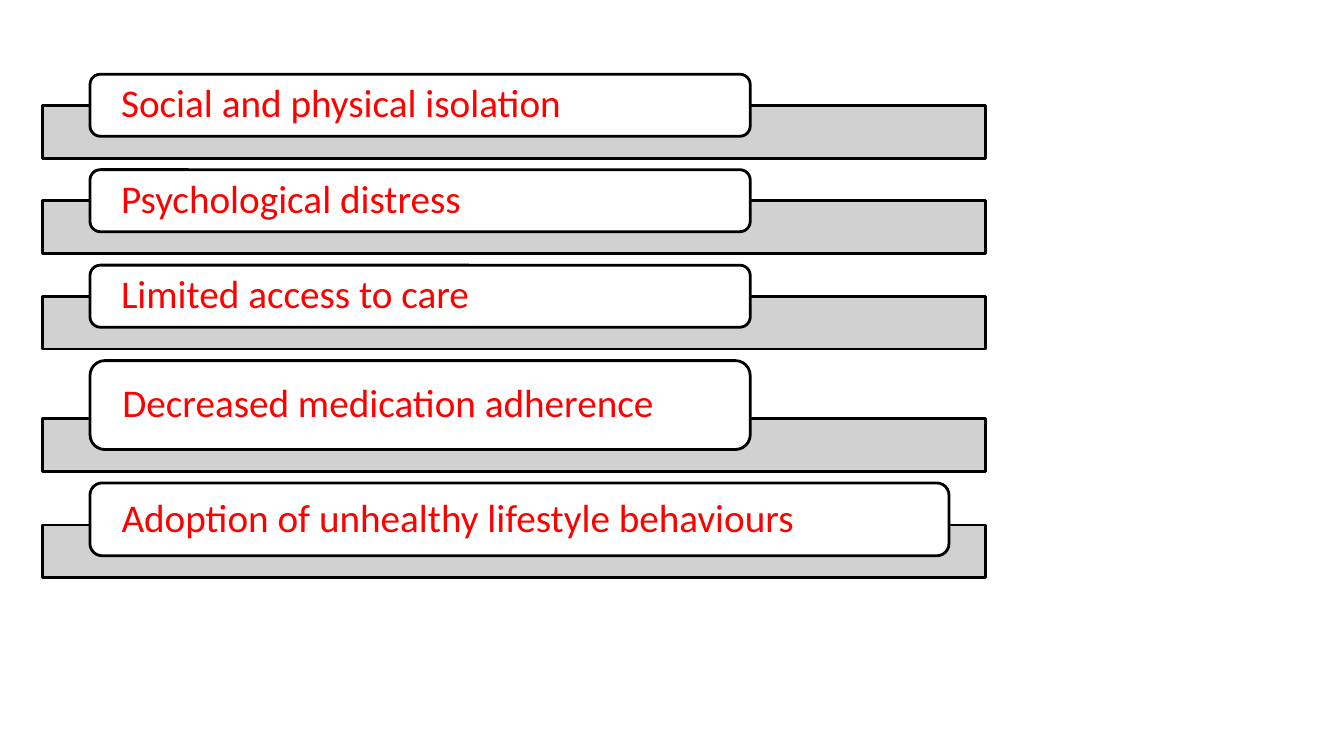
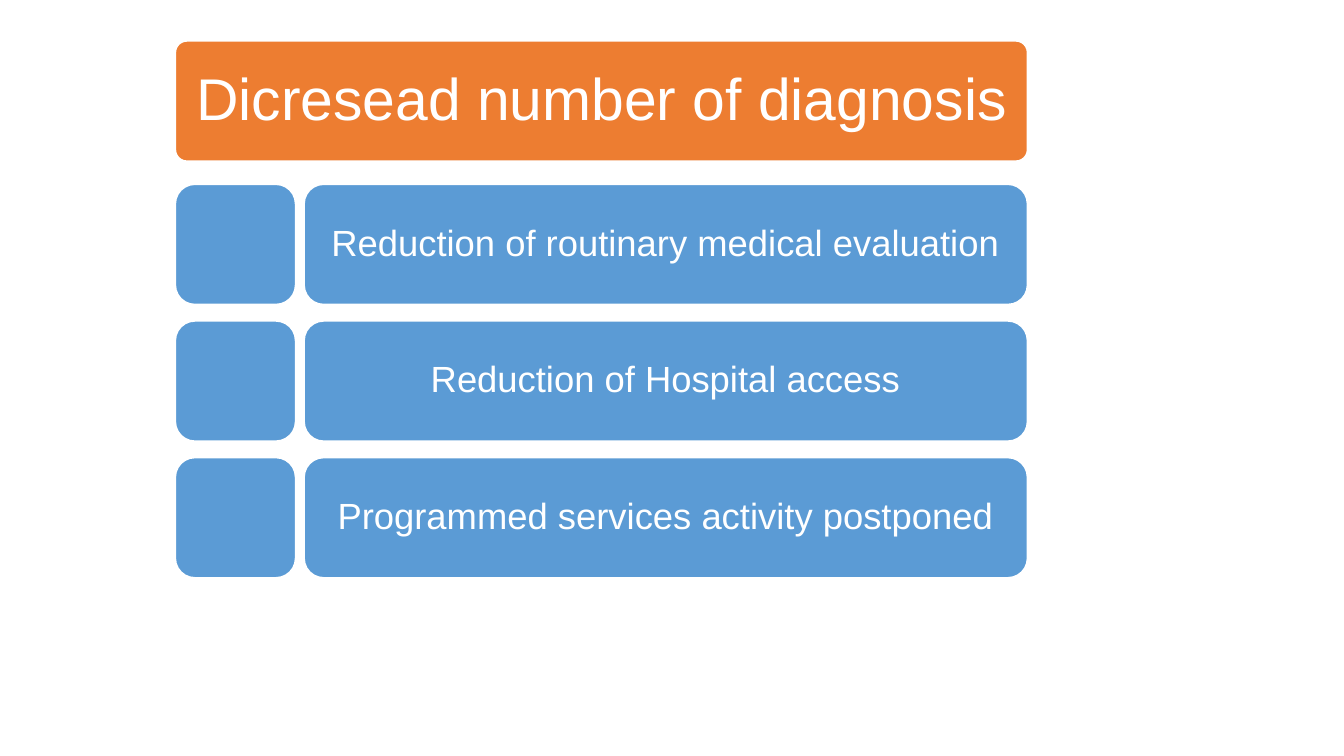
from lxml import etree
from pptx import Presentation
from pptx.dml.color import RGBColor
from pptx.enum.shapes import MSO_SHAPE
from pptx.enum.text import MSO_ANCHOR, MSO_AUTO_SIZE, PP_ALIGN
from pptx.oxml.ns import qn
from pptx.util import Pt

RECTANGLE = MSO_SHAPE.RECTANGLE
ROUNDED = MSO_SHAPE.ROUNDED_RECTANGLE
MIDDLE = MSO_ANCHOR.MIDDLE
NO_AUTOFIT = MSO_AUTO_SIZE.NONE
LEFT = PP_ALIGN.LEFT
CENTER = PP_ALIGN.CENTER
TITLE_ONLY, BLANK = 5, 6

COLORS = {
    "band": "CCCCCC",
    "outline": "000000",
    "white": "FFFFFF",
    "effect": "FF0000",
    "heading": "ED7D31",
    "cause": "5B9BD5",
}

EFFECTS = [
    ("Social and physical isolation", 471.6, 44.3),
    ("Psychological distress", 471.6, 44.3),
    ("Limited access to care", 471.6, 44.3),
    ("Decreased medication adherence", 471.6, 63.5),
    ("Adoption of unhealthy lifestyle behaviours", 613.6, 52),
]

HEADING = "Dicresead number of diagnosis"
CAUSES = [
    "Reduction of routinary medical evaluation",
    "Reduction of Hospital access",
    "Programmed services activity postponed",
]


def color(name):
    return RGBColor.from_string(COLORS[name])


def add_panel(slide, kind, box, fill, line):
    panel = slide.shapes.add_shape(kind, *map(Pt, box))
    panel.shadow.inherit = False
    panel.fill.solid()
    panel.fill.fore_color.rgb = color(fill)
    panel.line.color.rgb = color(line)
    panel.line.width = Pt(2)
    return panel


def set_opacity(panel, percent):
    rgb = panel.fill._xPr.find(qn("a:solidFill"))[0]
    etree.SubElement(rgb, qn("a:alpha")).set("val", str(percent * 1000))


def write(shape, text, font, size, ink, align, inset):
    frame = shape.text_frame
    frame.text = text
    frame.word_wrap = True
    frame.auto_size = NO_AUTOFIT
    frame.vertical_anchor = MIDDLE
    frame.margin_left = frame.margin_right = Pt(inset)
    frame.margin_top = frame.margin_bottom = Pt(0)
    paragraph = frame.paragraphs[0]
    paragraph.alignment = align
    paragraph.line_spacing = 0.9
    run_font = paragraph.runs[0].font
    run_font.name = font
    run_font.size = Pt(size)
    run_font.color.rgb = color(ink)


def build_effects(slide):
    band_height, overlap, gap = 37.7, 22, 8.2
    top = 53
    for text, width, height in EFFECTS:
        band_top = top + height - overlap
        band = add_panel(slide, RECTANGLE, (30.2, band_top, 674, band_height),
                         "band", "outline")
        set_opacity(band, 90)
        label = add_panel(slide, ROUNDED, (64.3, top, width, height),
                          "white", "outline")
        write(label, text, "Calibri", 28, "effect", LEFT, 20)
        top = band_top + band_height + gap


def build_causes(slide):
    left, width, height = 124.8, 609.6, 86.8
    label_left = left + height + 5.2
    label_width = left + width - label_left

    heading_box = (left, 28.8, width, height)
    heading = add_panel(slide, ROUNDED, heading_box, "heading", "white")
    heading.adjustments[0] = 0.1
    title = slide.shapes.title
    title.left, title.top, title.width, title.height = map(Pt, heading_box)
    write(title, HEADING, "Arial", 42, "white", CENTER, 8)
    slide.shapes._spTree.append(title._element)

    for row, text in enumerate(CAUSES):
        top = 131.2 + row * 97.6
        add_panel(slide, ROUNDED, (left, top, height, height), "cause", "white")
        label = add_panel(slide, ROUNDED, (label_left, top, label_width, height),
                          "cause", "white")
        write(label, text, "Arial", 26, "white", CENTER, 14)


def main():
    deck = Presentation()
    deck.slide_width, deck.slide_height = Pt(960), Pt(540)
    for layout, build in ((BLANK, build_effects), (TITLE_ONLY, build_causes)):
        build(deck.slides.add_slide(deck.slide_layouts[layout]))
    deck.save("out.pptx")


if __name__ == "__main__":
    main()
